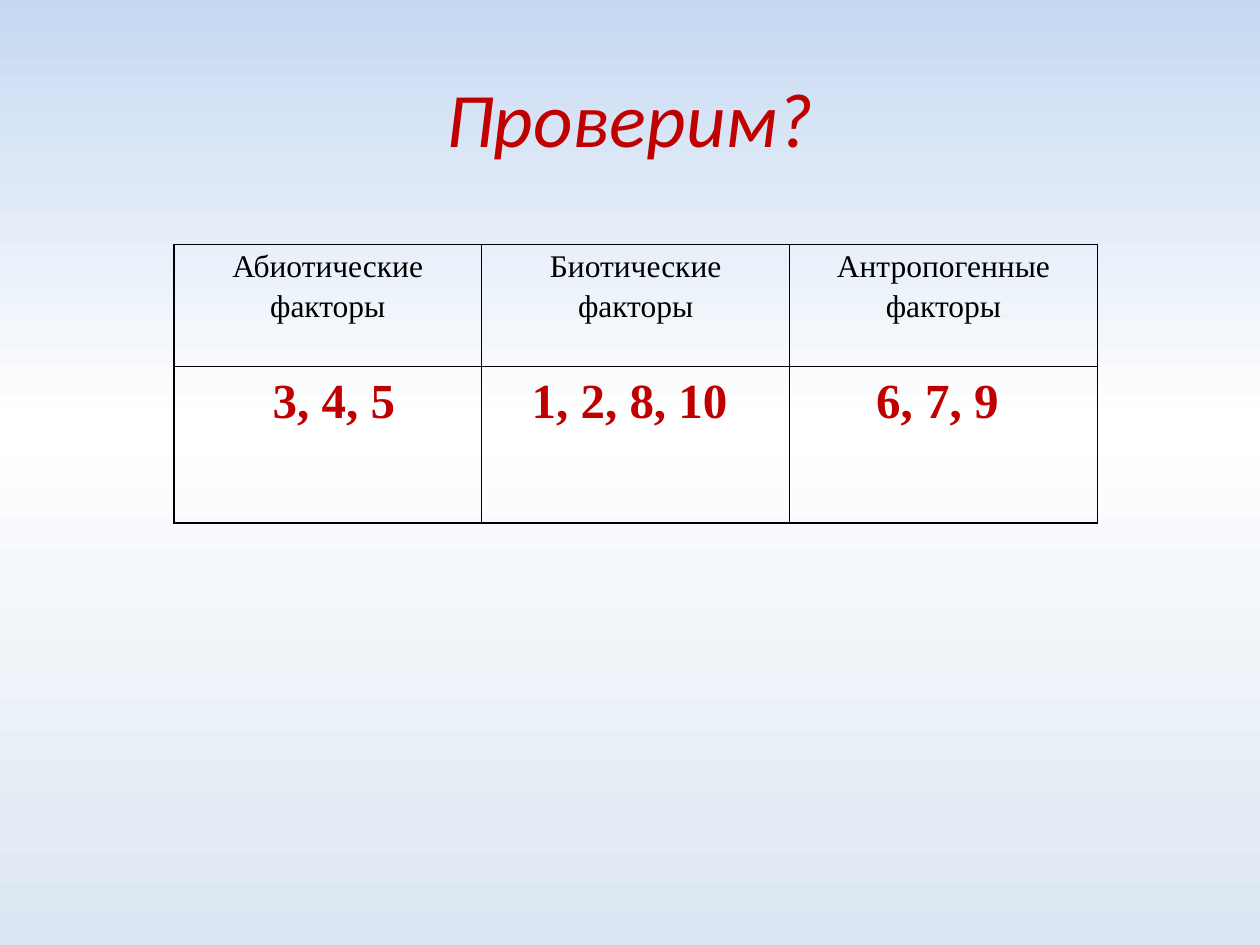
from typing import NamedTuple

from lxml import etree
from pptx import Presentation
from pptx.dml.color import RGBColor
from pptx.enum.text import MSO_ANCHOR, PP_ALIGN
from pptx.oxml.ns import qn
from pptx.util import Inches, Pt

CENTER = PP_ALIGN.CENTER
MIDDLE = MSO_ANCHOR.MIDDLE
WIDE, HIGH = 10, 7.5
BLACK, RED = "000000", "C00000"
STOPS = ((0, "C6D9F1"), (45, "FFFFFF"), (100, "DCE6F2"))


class Style(NamedTuple):
    """Look of a run of text."""
    font: str
    size: int
    color: str
    bold: bool = False
    italic: bool = False


class Row(NamedTuple):
    """Table row with its height in inches."""
    high: float
    style: Style
    texts: tuple


TITLE = Style("Calibri", 44, RED, italic=True)
HEAD = Style("Times New Roman", 18, BLACK)
ANSWER = Style("Times New Roman", 28, RED, bold=True)
ROWS = (
    Row(0.97, HEAD, ("Абиотические факторы", "Биотические факторы",
                     "Антропогенные факторы")),
    Row(1.24, ANSWER, (" 3, 4, 5", "1, 2, 8, 10 ", "6, 7, 9 ")),
)


def paint(color: str) -> RGBColor:
    """Turn a hex string into a colour."""
    return RGBColor.from_string(color)


def write(frame, text: str, style: Style, space: float = 1.0) -> None:
    """Put one centred run into a text frame."""
    para = frame.paragraphs[0]
    para.alignment = CENTER
    para.line_spacing = space
    run = para.add_run()
    run.text = text
    font = run.font
    font.name, font.size = style.font, Pt(style.size)
    font.bold, font.italic = style.bold, style.italic
    font.color.rgb = paint(style.color)


def shade(slide) -> None:
    """Fill the background with a vertical gradient."""
    fill = slide.background.fill
    fill.gradient()
    fill.gradient_angle = 270
    stops = next(slide.element.iter(qn("a:gsLst")))
    for old in list(stops):
        stops.remove(old)
    for share, color in STOPS:
        stop = etree.SubElement(stops, qn("a:gs"), pos=str(share * 1000))
        etree.SubElement(stop, qn("a:srgbClr"), val=color)


def border(cell) -> None:
    """Draw a thin black line on each side of a cell."""
    props = cell._tc.get_or_add_tcPr()
    for side in "LRTB":
        line = etree.SubElement(props, qn(f"a:ln{side}"), w=str(Pt(1)))
        fill = etree.SubElement(line, qn("a:solidFill"))
        etree.SubElement(fill, qn("a:srgbClr"), val=BLACK)


def head(slide) -> None:
    """Add the slide title."""
    box = slide.shapes.add_textbox(
        Inches(WIDE * 0.05), Inches(HIGH * 0.04),
        Inches(WIDE * 0.9), Inches(HIGH / 6))
    frame = box.text_frame
    frame.word_wrap = True
    frame.vertical_anchor = MIDDLE
    write(frame, "Проверим?", TITLE)


def grid(slide) -> None:
    """Add the table of factors and answers."""
    table = slide.shapes.add_table(
        len(ROWS), len(ROWS[0].texts), Inches(1.38), Inches(1.94),
        Inches(7.33), Inches(sum(row.high for row in ROWS))).table
    table.first_row = table.horz_banding = False
    for r, row in enumerate(ROWS):
        table.rows[r].height = Inches(row.high)
        for c, text in enumerate(row.texts):
            cell = table.cell(r, c)
            cell.margin_left = cell.margin_right = Inches(0.07)
            cell.margin_top = cell.margin_bottom = 0
            border(cell)
            cell.fill.background()
            write(cell.text_frame, text, row.style, 1.15)


def main() -> None:
    """Build and save the slide."""
    deck = Presentation()
    deck.slide_width, deck.slide_height = Inches(WIDE), Inches(HIGH)
    slide = deck.slides.add_slide(deck.slide_layouts[6])
    shade(slide)
    grid(slide)
    head(slide)
    deck.save("out.pptx")


if __name__ == "__main__":
    main()
